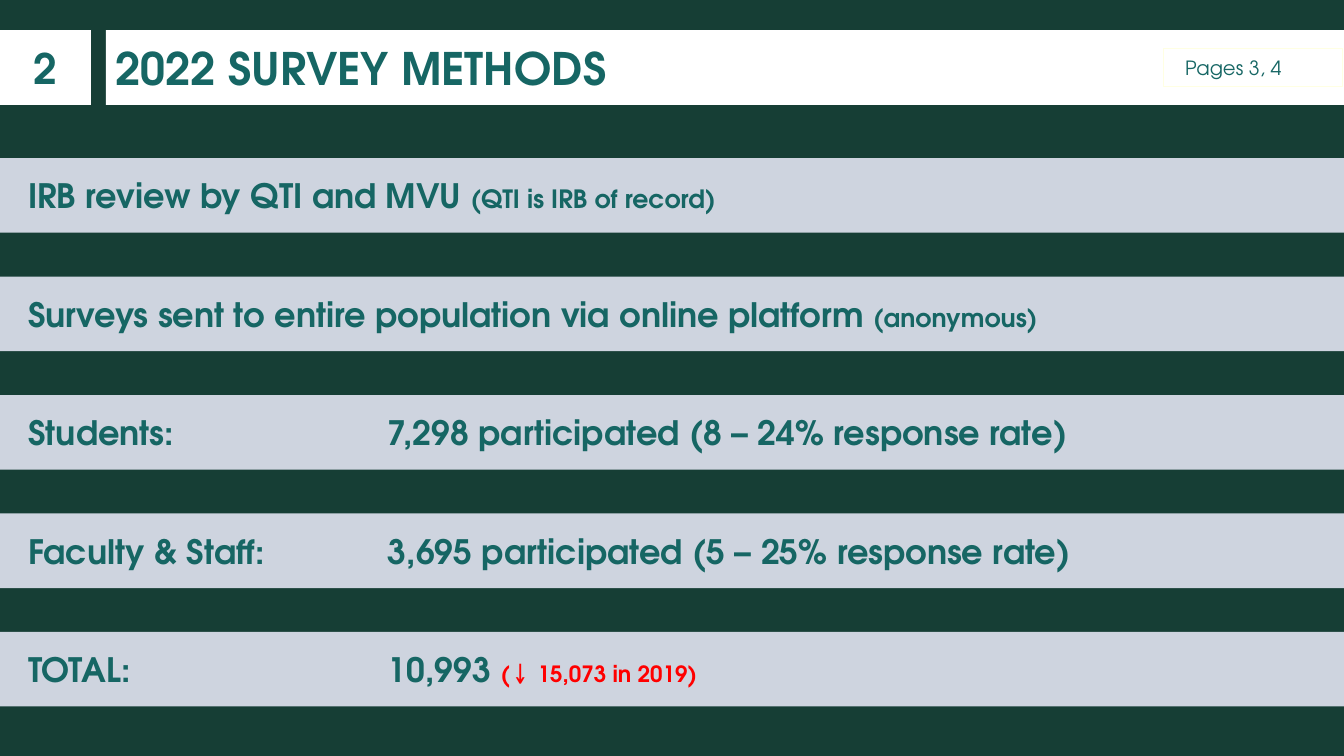
import pptx
import pptx.dml.color
import pptx.enum.shapes
import pptx.enum.text
import pptx.oxml.ns
import pptx.util
from lxml import etree

Pt = pptx.util.Pt
RGBColor = pptx.dml.color.RGBColor
ALIGN = pptx.enum.text.PP_ALIGN
ANCHOR = pptx.enum.text.MSO_ANCHOR

FONT = "TeX Gyre Adventor"
FOREST = RGBColor(0x16, 0x3E, 0x35)
TEAL = RGBColor(0x16, 0x66, 0x64)
MIST = RGBColor(0xCE, 0xD4, 0xDF)
WHITE = RGBColor(0xFF, 0xFF, 0xFF)
CREAM = RGBColor(0xFF, 0xFF, 0xE3)
RED = RGBColor(0xFF, 0x00, 0x00)

SLIDE_WIDTH, SLIDE_HEIGHT = 960, 540
HEADER_TOP, BAR_HEIGHT = 21.6, 53.3
FIRST_BAR_TOP, BAR_PITCH = 113, 84.6
BAR_INSET = 20
TAB_STOPS = (257, 364)

METHODS = [
    [("IRB review by QTI and MVU ", {}), ("(QTI is IRB of record)", {"size": 18})],
    [("Surveys sent to entire population via online platform ", {}),
     ("(anonymous)", {"size": 18})],
    [("Students:\t7,298 participated (8 – 24% response rate)", {})],
    [("Faculty & Staff:\t3,695 participated (5 – 25% response rate)", {})],
    [("TOTAL:\t10,993 ", {}), ("(\t15,073 in 2019)", {"size": 16, "color": RED})],
]


def add_run(paragraph, text, size=24, color=TEAL, bold=True):
    """Append formatted text to a paragraph."""
    run = paragraph.add_run()
    run.text = text
    run.font.name = FONT
    run.font.size = Pt(size)
    run.font.bold = bold
    run.font.color.rgb = color


def add_panel(slide, left, top, width, height, fill, inset=7.2, align=ALIGN.LEFT, outline=None):
    """Add a filled rectangle and return its empty paragraph."""
    panel = slide.shapes.add_shape(
        pptx.enum.shapes.MSO_SHAPE.RECTANGLE, Pt(left), Pt(top), Pt(width), Pt(height))
    panel.shadow.inherit = False
    panel.fill.solid()
    panel.fill.fore_color.rgb = fill
    if outline is None:
        panel.line.fill.background()
    else:
        panel.line.color.rgb = outline
        panel.line.width = Pt(0.75)
    frame = panel.text_frame
    frame.word_wrap = True
    frame.vertical_anchor = ANCHOR.MIDDLE
    frame.margin_left = Pt(inset)
    paragraph = frame.paragraphs[0]
    paragraph.alignment = align
    return paragraph


def set_tab_stops(paragraph, stops):
    """Give a paragraph left tab stops."""
    qn = pptx.oxml.ns.qn
    tabs = etree.SubElement(paragraph._p.get_or_add_pPr(), qn("a:tabLst"))
    for stop in stops:
        etree.SubElement(tabs, qn("a:tab"), pos=str(int(Pt(stop))), algn="l")


def add_header(slide):
    """Add the slide number, title and page reference."""
    number = add_panel(slide, 0, HEADER_TOP, 65, BAR_HEIGHT, WHITE, align=ALIGN.CENTER)
    add_run(number, "2", size=30)
    title = add_panel(slide, 75.6, HEADER_TOP, SLIDE_WIDTH - 75.6, BAR_HEIGHT, WHITE)
    add_run(title, "2022 SURVEY METHODS", size=32)
    pages = add_panel(slide, 831, 34.5, 128, 27.5, WHITE, inset=15.5, outline=CREAM)
    add_run(pages, "Pages 3, 4", size=14, bold=False)


def add_methods(slide):
    """Add the evenly spaced bars of survey methods."""
    for index, parts in enumerate(METHODS):
        top = FIRST_BAR_TOP + index * BAR_PITCH
        method = add_panel(slide, 0, top, SLIDE_WIDTH, BAR_HEIGHT, MIST, inset=BAR_INSET)
        set_tab_stops(method, TAB_STOPS)
        for text, style in parts:
            add_run(method, text, **style)


def add_decrease_arrow(slide):
    """Add the arrow that marks the lower total."""
    decrease = slide.shapes.add_textbox(Pt(360), Pt(464.4), Pt(22.3), Pt(28.8))
    decrease.text_frame.word_wrap = False
    add_run(decrease.text_frame.paragraphs[0], "↓", size=18, color=RED, bold=False)


def main():
    """Build and save the survey methods slide."""
    deck = pptx.Presentation()
    deck.slide_width, deck.slide_height = Pt(SLIDE_WIDTH), Pt(SLIDE_HEIGHT)
    slide = deck.slides.add_slide(deck.slide_layouts[6])
    slide.background.fill.solid()
    slide.background.fill.fore_color.rgb = FOREST
    add_header(slide)
    add_methods(slide)
    add_decrease_arrow(slide)
    deck.save("out.pptx")


if __name__ == "__main__":
    main()
